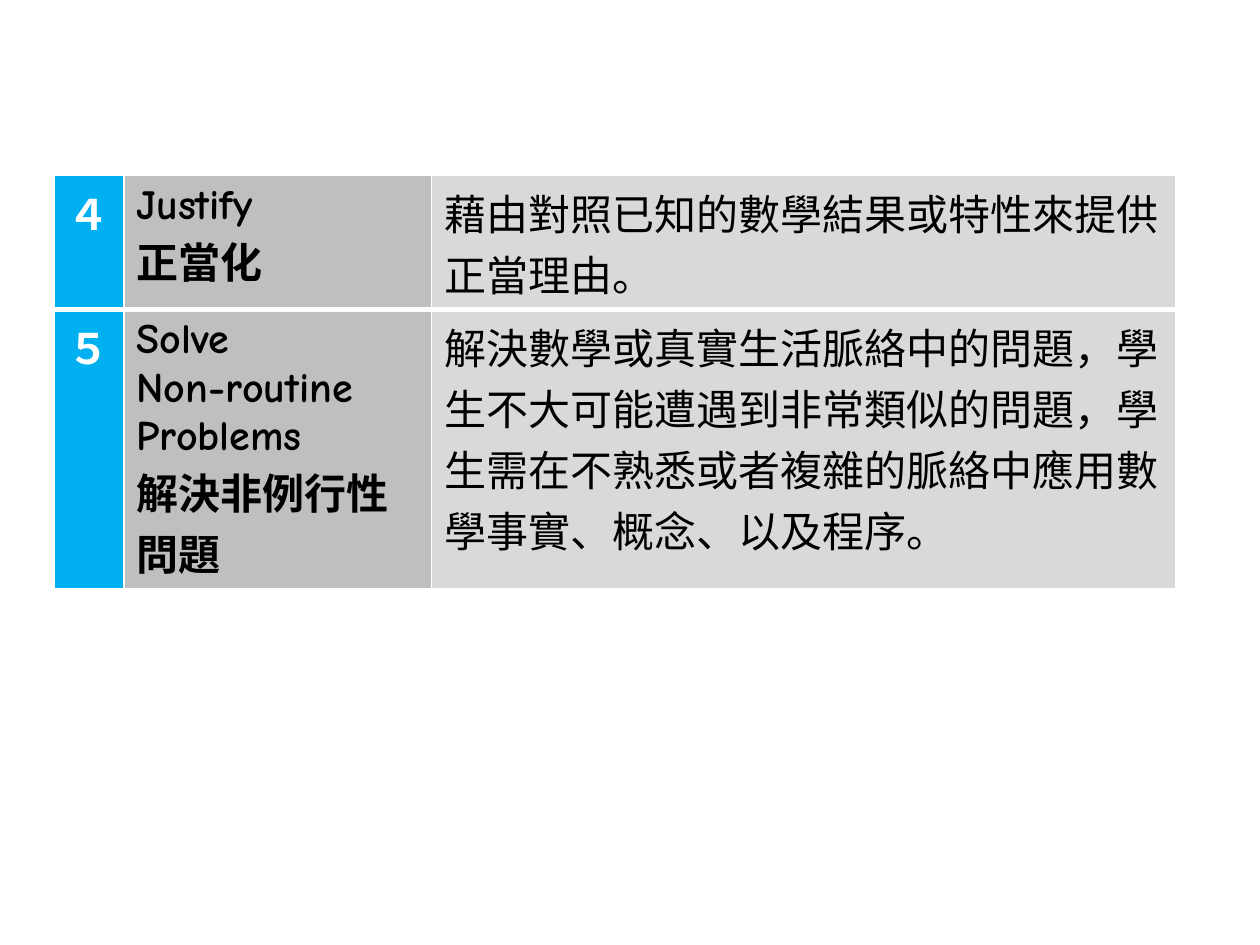
from dataclasses import dataclass

import pptx
import pptx.dml.color
import pptx.oxml
import pptx.oxml.ns
import pptx.util
from lxml import etree

Cm = pptx.util.Cm
Pt = pptx.util.Pt
RGBColor = pptx.dml.color.RGBColor
qn = pptx.oxml.ns.qn

WHITE = RGBColor(0xFF, 0xFF, 0xFF)
BLACK = RGBColor(0, 0, 0)
BLUE = RGBColor(0x00, 0xB0, 0xF0)
MID_GRAY = RGBColor(0xBF, 0xBF, 0xBF)
LIGHT_GRAY = RGBColor(0xD9, 0xD9, 0xD9)

FONT_NAME = "Comic Neue"
FONT_SIZE = Pt(24)


@dataclass(frozen=True)
class Column:
    width: pptx.util.Length
    fill: RGBColor
    color: RGBColor
    bold: bool


@dataclass(frozen=True)
class Level:
    height: pptx.util.Length
    top_border: float
    bottom_border: float
    texts: tuple[str, str, str]


COLUMNS = (
    Column(Cm(1.4), BLUE, WHITE, True),
    Column(Cm(6.2), MID_GRAY, BLACK, True),
    Column(Cm(15), LIGHT_GRAY, BLACK, False),
)

LEVELS = (
    Level(Cm(2.1), 1, 3, (
        "４",
        "Justify\n正當化",
        "藉由對照已知的數學結果或特性來提供正當理由。",
    )),
    Level(Cm(2.7), 3, 1, (
        "５",
        "Solve\nNon-routine\nProblems\n解決非例行性問題",
        "解決數學或真實生活脈絡中的問題，學生不大可能遭遇到非常類似的問題，"
        "學生需在不熟悉或者複雜的脈絡中應用數學事實、概念、以及程序。",
    )),
)


def set_borders(cell, top: float, bottom: float) -> None:
    properties = cell._tc.get_or_add_tcPr()
    widths = {"a:lnL": 1, "a:lnR": 1, "a:lnT": top, "a:lnB": bottom}
    for tag, width in widths.items():
        line = etree.SubElement(properties, qn(tag), w=str(Pt(width)))
        fill = etree.SubElement(line, qn("a:solidFill"))
        etree.SubElement(fill, qn("a:srgbClr"), val=str(WHITE))


def fill_cell(cell, text: str, column: Column, level: Level) -> None:
    set_borders(cell, level.top_border, level.bottom_border)
    cell.fill.solid()
    cell.fill.fore_color.rgb = column.fill
    cell.text_frame.text = text
    for paragraph in cell.text_frame.paragraphs:
        for span in paragraph.runs:
            span.font.name = FONT_NAME
            span.font.size = FONT_SIZE
            span.font.bold = column.bold
            span.font.color.rgb = column.color


def add_level_table(page) -> None:
    width = sum(column.width for column in COLUMNS)
    height = sum(level.height for level in LEVELS)
    frame = page.shapes.add_table(
        len(LEVELS), len(COLUMNS), Cm(1.1), Cm(3.53), width, height
    )
    table = frame.table
    table.first_row = False
    table.horz_banding = False
    for index, column in enumerate(COLUMNS):
        table.columns[index].width = column.width
    for row, level in enumerate(LEVELS):
        table.rows[row].height = level.height
        for index, (column, text) in enumerate(zip(COLUMNS, level.texts)):
            fill_cell(table.cell(row, index), text, column, level)


def main() -> None:
    deck = pptx.Presentation()
    deck.slide_width = Cm(25.4)
    deck.slide_height = Cm(19.05)
    page = deck.slides.add_slide(deck.slide_layouts[6])
    add_level_table(page)
    deck.save("out.pptx")


if __name__ == "__main__":
    main()
